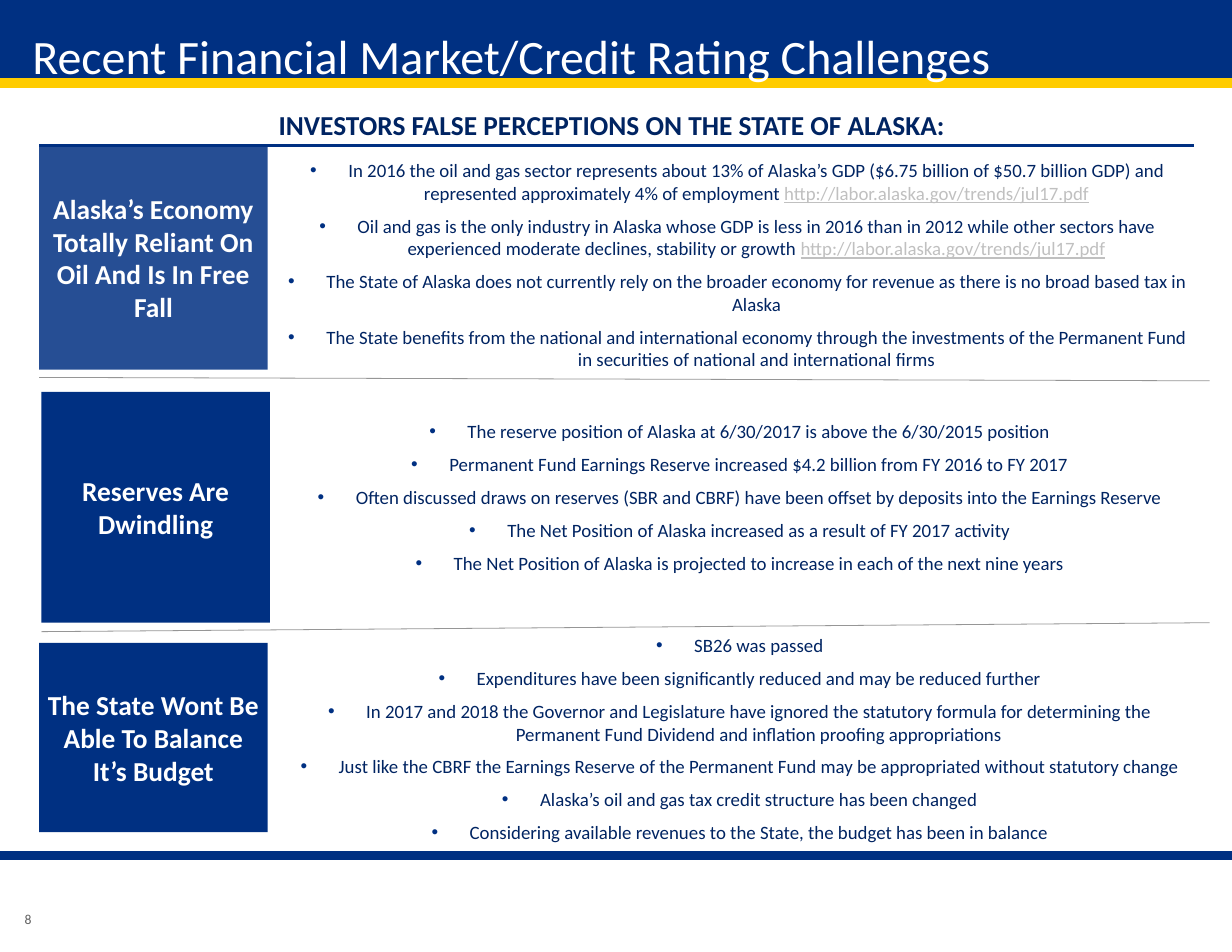
from dataclasses import dataclass

from lxml.etree import SubElement
from pptx import Presentation
from pptx.dml.color import RGBColor
from pptx.enum.shapes import MSO_CONNECTOR, MSO_SHAPE
from pptx.enum.text import MSO_ANCHOR, PP_ALIGN
from pptx.oxml.ns import qn
from pptx.util import Inches, Pt

FONT = "Calibri"
NAVY = "003082"
INK = "002462"
GOLD = "FFCC00"
WHITE = "FFFFFF"
LINK_GRAY = "C0C0C0"
RULE_GRAY = "969696"
NUMBER_GRAY = "5F5F5F"
REPORT_LINK = "http://labor.alaska.gov/trends/jul17.pdf"


@dataclass
class Box:
    left: float
    top: float
    width: float
    height: float

    def lengths(self):
        return [Inches(n) for n in (self.left, self.top, self.width, self.height)]


@dataclass
class Bullet:
    text: str
    link: str = ""


@dataclass
class Section:
    heading: str
    heading_box: Box
    bullet_box: Box
    bullets: list[Bullet]
    opacity: int = 100


@dataclass
class Rule:
    start: tuple[float, float]
    end: tuple[float, float]
    color: str
    width: float


SECTIONS = [
    Section(
        "Alaska’s Economy Totally Reliant On Oil And Is In Free Fall",
        Box(0.35, 1.3, 2.04, 2),
        Box(2.52, 1.42, 8.13, 2.23),
        [
            Bullet("In 2016 the oil and gas sector represents about 13% of Alaska’s GDP ($6.75 billion of "
                   "$50.7 billion GDP) and represented approximately 4% of employment ", REPORT_LINK),
            Bullet("Oil and gas is the only industry in Alaska whose GDP is less in 2016 than in 2012 while "
                   "other sectors have experienced moderate declines, stability or growth ", REPORT_LINK),
            Bullet("The State of Alaska does not currently rely on the broader economy for revenue as there "
                   "is no broad based tax in Alaska"),
            Bullet("The State benefits from the national and international economy through the investments "
                   "of the Permanent Fund in securities of national and international firms"),
        ],
        opacity=85,
    ),
    Section(
        "Reserves Are Dwindling",
        Box(0.37, 3.5, 2.04, 2.06),
        Box(2.54, 3.75, 8.13, 1.41),
        [
            Bullet("The reserve position of Alaska at 6/30/2017 is above the 6/30/2015 position"),
            Bullet("Permanent Fund Earnings Reserve increased $4.2 billion from FY 2016 to FY 2017"),
            Bullet("Often discussed draws on reserves (SBR and CBRF) have been offset by deposits into the "
                   "Earnings Reserve"),
            Bullet("The Net Position of Alaska increased as a result of FY 2017 activity"),
            Bullet("The Net Position of Alaska is projected to increase in each of the next nine years"),
        ],
    ),
    Section(
        "The State Wont Be Able To Balance It’s Budget",
        Box(0.35, 5.74, 2.04, 1.69),
        Box(2.54, 5.66, 8.13, 2.22),
        [
            Bullet("SB26 was passed"),
            Bullet("Expenditures have been significantly reduced and may be reduced further"),
            Bullet("In 2017 and 2018 the Governor and Legislature have ignored the statutory formula for "
                   "determining the Permanent Fund Dividend and inflation proofing appropriations"),
            Bullet("Just like the CBRF the Earnings Reserve of the Permanent Fund may be appropriated "
                   "without statutory change"),
            Bullet("Alaska’s oil and gas tax credit structure has been changed"),
            Bullet("Considering available revenues to the State, the budget has been in balance"),
        ],
    ),
]

MASTER_RULES = [
    Rule((0, 0.74), (11, 0.74), GOLD, 6),
    Rule((0, 7.64), (11, 7.64), NAVY, 6),
]
SECTION_RULES = [
    Rule((0.35, 1.3), (10.66, 1.3), NAVY, 1.5),
    Rule((0.35, 3.37), (10.8, 3.4), RULE_GRAY, 0.5),
    Rule((0.37, 5.64), (10.8, 5.56), RULE_GRAY, 0.5),
]


def rgb(color: str) -> RGBColor:
    return RGBColor.from_string(color)


def add_run(paragraph, text: str, size: float, color: str, bold=False, underline=False) -> None:
    run = paragraph.add_run()
    run.text = text
    run.font.name = FONT
    run.font.size = Pt(size)
    run.font.bold = bold
    run.font.underline = underline
    run.font.color.rgb = rgb(color)


def set_frame(shape, horizontal: float, vertical: float, anchor=MSO_ANCHOR.TOP, wrap=True):
    frame = shape.text_frame
    frame.word_wrap = wrap
    frame.margin_left = frame.margin_right = Inches(horizontal)
    frame.margin_top = frame.margin_bottom = Inches(vertical)
    frame.vertical_anchor = anchor
    return frame


def add_rectangle(slide, box: Box, opacity: int = 100):
    shape = slide.shapes.add_shape(MSO_SHAPE.RECTANGLE, *box.lengths())
    shape.shadow.inherit = False
    shape.fill.solid()
    shape.fill.fore_color.rgb = rgb(NAVY)
    shape.line.fill.background()
    if opacity < 100:
        fill_color = shape.fill._xPr.find(qn("a:solidFill")).find(qn("a:srgbClr"))
        SubElement(fill_color, qn("a:alpha"), val=str(opacity * 1000))
    return shape


def add_rule(slide, rule: Rule) -> None:
    points = [Inches(n) for n in rule.start + rule.end]
    connector = slide.shapes.add_connector(MSO_CONNECTOR.STRAIGHT, *points)
    connector.line.color.rgb = rgb(rule.color)
    connector.line.width = Pt(rule.width)
    SubElement(connector._element.spPr, qn("a:effectLst"))


def add_bullet_mark(paragraph) -> None:
    properties = paragraph._p.get_or_add_pPr()
    properties.set("marL", str(Inches(0.34)))
    properties.set("indent", str(-Inches(0.34)))
    bullet_color = SubElement(properties, qn("a:buClr"))
    SubElement(bullet_color, qn("a:srgbClr"), val=NAVY)
    SubElement(properties, qn("a:buFont"), typeface="Arial")
    SubElement(properties, qn("a:buChar"), char="•")


def add_section(slide, section: Section) -> None:
    rectangle = add_rectangle(slide, section.heading_box, section.opacity)
    heading = set_frame(rectangle, 0.06, 0.05, MSO_ANCHOR.MIDDLE).paragraphs[0]
    heading.alignment = PP_ALIGN.CENTER
    add_run(heading, section.heading, 17.6, WHITE, bold=True)

    frame = set_frame(slide.shapes.add_textbox(*section.bullet_box.lengths()), 0, 0)
    for index, bullet in enumerate(section.bullets):
        paragraph = frame.add_paragraph() if index else frame.paragraphs[0]
        add_bullet_mark(paragraph)
        paragraph.alignment = PP_ALIGN.CENTER
        if index:
            paragraph.space_before = Pt(6.6)
        add_run(paragraph, bullet.text, 12.1, INK)
        if bullet.link:
            add_run(paragraph, bullet.link, 12.1, LINK_GRAY, underline=True)


def main() -> None:
    presentation = Presentation()
    presentation.slide_width = Inches(11)
    presentation.slide_height = Inches(8.5)
    slide = presentation.slides.add_slide(presentation.slide_layouts[6])

    add_rectangle(slide, Box(0, 0, 11, 0.76))
    for rule in MASTER_RULES:
        add_rule(slide, rule)
    for section in SECTIONS:
        add_section(slide, section)
    for rule in SECTION_RULES:
        add_rule(slide, rule)

    title_box = slide.shapes.add_textbox(*Box(0.18, 0.18, 10.23, 0.51).lengths())
    title = set_frame(title_box, 0.11, 0.06).paragraphs[0]
    add_run(title, "Recent Financial Market/Credit Rating Challenges", 30.8, WHITE)

    subtitle_box = slide.shapes.add_textbox(*Box(0.35, 0.85, 10.23, 0.52).lengths())
    subtitle = set_frame(subtitle_box, 0, 0, MSO_ANCHOR.MIDDLE).paragraphs[0]
    subtitle.alignment = PP_ALIGN.CENTER
    add_run(subtitle, "INVESTORS FALSE PERCEPTIONS ON THE STATE OF ALASKA:", 17.6, INK, bold=True)

    number_box = slide.shapes.add_textbox(*Box(0.11, 8.08, 0.28, 0.27).lengths())
    number = set_frame(number_box, 0, 0.05, wrap=False).paragraphs[0]
    number.alignment = PP_ALIGN.CENTER
    add_run(number, "8", 8.8, NUMBER_GRAY)

    presentation.save("out.pptx")


if __name__ == "__main__":
    main()
